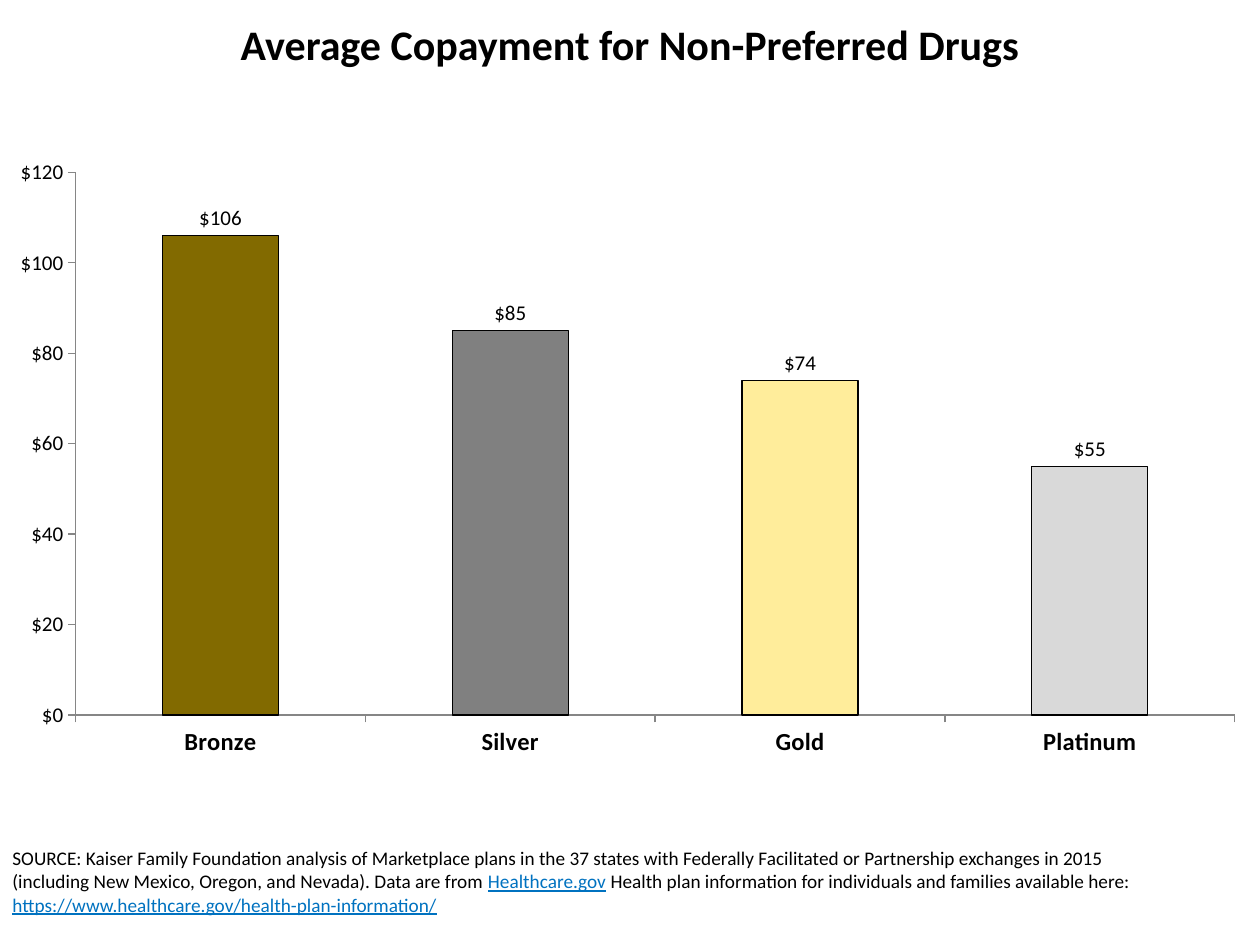
from lxml import etree
from pptx import Presentation
from pptx.chart.data import CategoryChartData
from pptx.dml.color import RGBColor
from pptx.enum.chart import XL_CHART_TYPE, XL_LABEL_POSITION, XL_TICK_MARK
from pptx.enum.text import PP_ALIGN
from pptx.oxml.ns import qn
from pptx.util import Inches, Pt

COLUMN = XL_CHART_TYPE.COLUMN_CLUSTERED
OUT_END = XL_LABEL_POSITION.OUTSIDE_END
OUTSIDE = XL_TICK_MARK.OUTSIDE
NO_TICK = XL_TICK_MARK.NONE
CENTER = PP_ALIGN.CENTER

FACE = "Calibri"
BLACK = "000000"
BLUE = "0072C0"
GRAY = "868686"
MONEY = '"$"#,##0'
TIERS = [
    ("Bronze", 106, "826A00"),
    ("Silver", 85, "808080"),
    ("Gold", 74, "FFED9B"),
    ("Platinum", 55, "D9D9D9"),
]
SOURCE = [
    ("SOURCE: Kaiser Family Foundation analysis of Marketplace plans in the 37 states "
     "with Federally Facilitated or Partnership exchanges in 2015 (including New Mexico, "
     "Oregon, and Nevada). Data are from ", False),
    ("Healthcare.gov", True),
    (" Health plan information for individuals and families available here: ", False),
    ("https://www.healthcare.gov/health-plan-information/", True),
]


def color(code):
    return RGBColor.from_string(code)


def style(font, size, bold=False, code=BLACK):
    font.name = FACE
    font.size = Pt(size)
    font.bold = bold
    font.color.rgb = color(code)


def add_text(slide, box):
    frame = slide.shapes.add_textbox(*map(Inches, box)).text_frame
    frame.word_wrap = True
    return frame


def add_title(slide, box):
    frame = add_text(slide, box)
    frame.text = "Average Copayment for Non-Preferred Drugs"
    line = frame.paragraphs[0]
    line.alignment = CENTER
    style(line.runs[0].font, 24, True)


def add_source(slide, box):
    line = add_text(slide, box).paragraphs[0]
    for text, linked in SOURCE:
        run = line.add_run()
        run.text = text
        style(run.font, 11, code=BLUE if linked else BLACK)
        run.font.underline = linked


def set_plot(chart, box):
    area = chart._chartSpace.chart.plotArea
    for old in area.findall(qn("c:layout")):
        area.remove(old)
    layout = etree.Element(qn("c:layout"))
    manual = etree.SubElement(layout, qn("c:manualLayout"))
    parts = [("layoutTarget", "inner"), ("xMode", "edge"), ("yMode", "edge")]
    for tag, value in parts + list(zip("xywh", box)):
        etree.SubElement(manual, qn("c:" + tag)).set("val", str(value))
    area.insert(0, layout)


def add_bars(slide, box):
    data = CategoryChartData(number_format=MONEY)
    data.categories = [name for name, _, _ in TIERS]
    data.add_series("Series 1", [value for _, value, _ in TIERS])
    chart = slide.shapes.add_chart(COLUMN, *map(Inches, box), data).chart
    chart.has_title = False
    chart.has_legend = False
    style(chart.font, 12)
    set_plot(chart, (0.06, 0.04, 0.92, 0.87))

    for axis in (chart.category_axis, chart.value_axis):
        axis.has_major_gridlines = False
        axis.major_tick_mark = OUTSIDE
        axis.minor_tick_mark = NO_TICK
        axis.format.line.color.rgb = color(GRAY)
        axis.format.line.width = Pt(0.75)
    style(chart.category_axis.tick_labels.font, 14, True)
    scale = chart.value_axis
    scale.minimum_scale = 0
    scale.maximum_scale = 120
    scale.major_unit = 20
    scale.tick_labels.number_format = MONEY
    scale.tick_labels.number_format_is_linked = False
    style(scale.tick_labels.font, 12)

    plot = chart.plots[0]
    plot.gap_width = 150
    plot.vary_by_categories = False
    series = plot.series[0]
    series.format.fill.solid()
    series.format.fill.fore_color.rgb = color("133559")
    for index, (_, _, code) in enumerate(TIERS):
        form = series.points[index].format
        form.fill.solid()
        form.fill.fore_color.rgb = color(code)
        form.line.color.rgb = color(BLACK)
        form.line.width = Pt(0.75)

    labels = series.data_labels
    labels.show_value = True
    labels.number_format = MONEY
    labels.number_format_is_linked = False
    labels.position = OUT_END
    style(labels.font, 12)


def main():
    deck = Presentation()
    deck.slide_width = Inches(10)
    deck.slide_height = Inches(7.5)
    slide = deck.slides.add_slide(deck.slide_layouts[6])
    add_source(slide, (0, 6.67, 9.25, 0.84))
    add_title(slide, (0.1, 0.1, 9.8, 1))
    add_bars(slide, (0, 1.17, 10, 4.95))
    deck.save("out.pptx")


if __name__ == "__main__":
    main()
